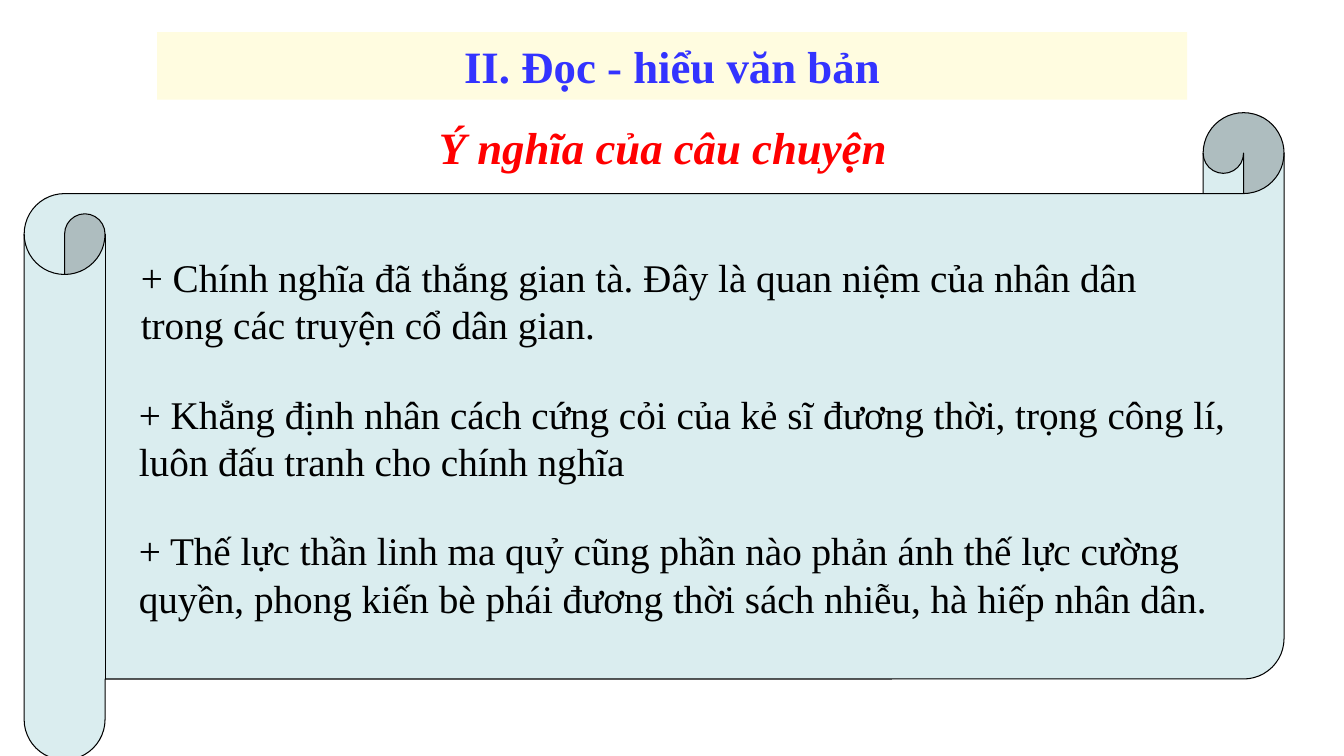
from pptx import Presentation
from pptx.dml.color import RGBColor
from pptx.enum.shapes import MSO_SHAPE as SHAPE
from pptx.enum.text import MSO_ANCHOR as ANCHOR, MSO_AUTO_SIZE as AUTO, PP_ALIGN as ALIGN
from pptx.util import Cm, Pt

FONT = "Times New Roman"
BLACK = RGBColor(0x00, 0x00, 0x00)
RED = RGBColor(0xFF, 0x00, 0x00)
BLUE = RGBColor(0x33, 0x33, 0xFF)
CREAM = RGBColor(0xFF, 0xFC, 0xE0)
PALE_TEAL = RGBColor(0xDA, 0xED, 0xEF)

POINTS_TOP, POINTS_STEP = 6.25, 3.45
# Left, width and wording of each point
POINTS = [
    (3.3, 27.1, "+ Chính nghĩa đã thắng gian tà. Đây là quan niệm của nhân dân "
                "trong các truyện cổ dân gian."),
    (3.25, 27.94, "+ Khẳng định nhân cách cứng cỏi của kẻ sĩ đương thời, "
                  "trọng công lí, luôn đấu tranh cho chính nghĩa"),
    (3.25, 29.36, "+ Thế lực thần linh ma quỷ cũng phần nào phản ánh thế lực cường "
                  "quyền, phong kiến bè phái đương thời sách nhiễu, hà hiếp nhân dân."),
]


class SlideBuilder:
    def __init__(self, slide, font):
        self.shapes = slide.shapes
        self.font = font

    def shape(self, kind, box, fill, line=None):
        sp = self.shapes.add_shape(kind, *map(Cm, box))
        sp.shadow.inherit = False
        sp.fill.solid()
        sp.fill.fore_color.rgb = fill
        if line is None:
            sp.line.fill.background()
        else:
            sp.line.color.rgb = line
            sp.line.width = Pt(0.75)
        return sp

    def set_text(self, sp, text, size, color, align=ALIGN.LEFT, bold=False, italic=False):
        tf = sp.text_frame
        tf.word_wrap = True
        p = tf.paragraphs[0]
        p.text = text
        p.alignment = align
        p.font.name = self.font
        p.font.size = Pt(size)
        p.font.bold = bold
        p.font.italic = italic
        p.font.color.rgb = color
        return tf

    def text(self, box, text, size, color, **style):
        sp = self.shapes.add_textbox(*map(Cm, box))
        tf = self.set_text(sp, text, size, color, **style)
        tf.auto_size = AUTO.SHAPE_TO_FIT_TEXT


def main():
    prs = Presentation()
    prs.slide_width, prs.slide_height = Cm(33.87), Cm(19.05)
    s = SlideBuilder(prs.slides.add_slide(prs.slide_layouts[6]), FONT)

    # Scroll
    scroll = s.shape(SHAPE.HORIZONTAL_SCROLL, (0.61, 2.84, 31.75, 16.31), PALE_TEAL, BLACK)
    scroll.adjustments[0] = 0.125

    # Subtitle
    s.text((7.54, 2.9, 18.34, 1.63), "Ý nghĩa của câu chuyện", 32, RED,
           align=ALIGN.CENTER, bold=True, italic=True)

    # Points on the scroll
    for i, (left, width, point) in enumerate(POINTS):
        s.text((left, POINTS_TOP + i * POINTS_STEP, width, 2.64), point, 28, BLACK)

    # Title band
    band = s.shape(SHAPE.RECTANGLE, (3.96, 0.81, 25.96, 1.7), CREAM)
    tf = s.set_text(band, "II. Đọc - hiểu văn bản", 32, BLUE, align=ALIGN.CENTER, bold=True)
    tf.vertical_anchor = ANCHOR.MIDDLE

    prs.save("out.pptx")


if __name__ == "__main__":
    main()
